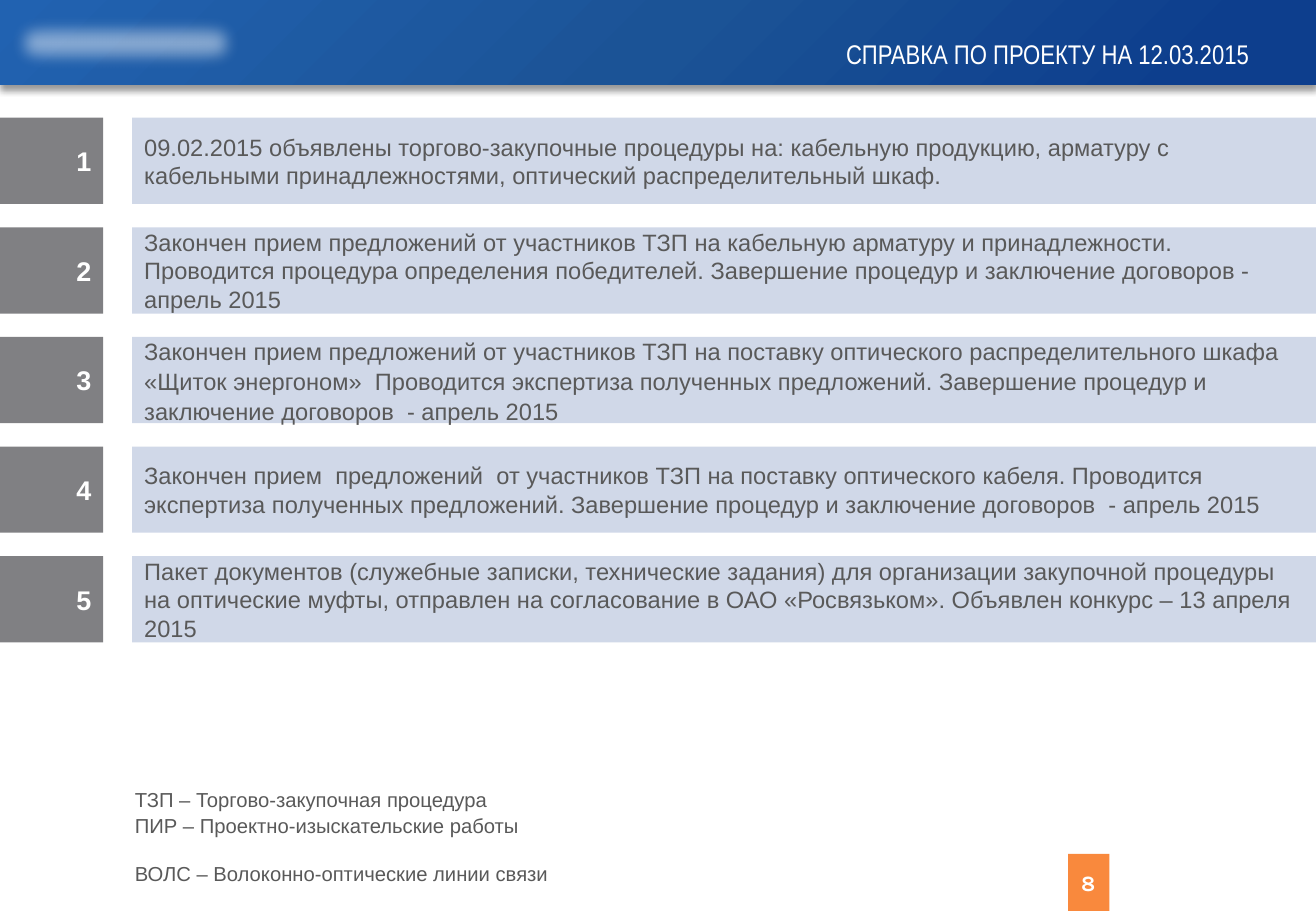
from dataclasses import dataclass

from lxml import etree
from pptx import Presentation
from pptx.dml.color import RGBColor
from pptx.enum.shapes import MSO_SHAPE as SHAPE
from pptx.enum.text import MSO_ANCHOR as ANCHOR, PP_ALIGN as ALIGN
from pptx.oxml import parse_xml
from pptx.oxml.ns import nsdecls
from pptx.util import Inches, Pt


@dataclass(frozen=True)
class Theme:
    white: str = "FFFFFF"
    text: str = "595959"
    number_fill: str = "808083"
    item_fill: str = "D0D8E8"
    accent: str = "F9893D"
    shadow: str = "000000"
    header_stops: tuple = ((9, "0D3E8D"), (50, "1B5396"), (100, "2162B1"))
    font: str = "Arial"
    title_font: str = "Arial Narrow"
    page_font: str = "Karla"
    title_size: int = 16
    number_size: int = 16
    item_size: int = 14
    page_size: int = 13
    note_size: int = 12


class Deck:
    """Holds the theme and current slide; boxes are (left, top, width, height) in percent of the slide."""

    def __init__(self, theme, width, height):
        self.theme = theme
        self.prs = Presentation()
        self.prs.slide_width, self.prs.slide_height = Inches(width), Inches(height)
        self.slide = self.prs.slides.add_slide(self.prs.slide_layouts[6])

    def place(self, box):
        w, h = self.prs.slide_width, self.prs.slide_height
        return [int(share * side / 100) for share, side in zip(box, (w, h, w, h))]

    def rect(self, box, color):
        sp = self.slide.shapes.add_shape(SHAPE.RECTANGLE, *self.place(box))
        sp.shadow.inherit = False
        sp.fill.solid()
        sp.fill.fore_color.rgb = RGBColor.from_string(color)
        sp.line.fill.background()
        return sp

    def effect(self, sp, xml):
        effects = sp._element.spPr.find("{*}effectLst")
        effects.append(parse_xml(xml))

    def header(self, box):
        """Band with a radial gradient from its lower right corner and a shadow below."""
        t = self.theme
        sp = self.rect(box, t.header_stops[0][1])
        stops = "".join(f'<a:gs pos="{pos * 1000}"><a:srgbClr val="{color}"/></a:gs>'
                        for pos, color in t.header_stops)
        gradient = parse_xml(
            f'<a:gradFill {nsdecls("a")} rotWithShape="1"><a:gsLst>{stops}</a:gsLst>'
            '<a:path path="circle"><a:fillToRect l="100000" t="100000"/></a:path></a:gradFill>')
        spPr = sp._element.spPr
        spPr.replace(spPr.find("{*}solidFill"), gradient)
        self.effect(sp, f'<a:outerShdw {nsdecls("a")} blurRad="{Pt(4)}" dist="{Pt(3)}" dir="5400000">'
                        f'<a:srgbClr val="{t.shadow}"><a:alpha val="40000"/></a:srgbClr></a:outerShdw>')

    def soft_patch(self, box):
        """Translucent white area with blurred edges."""
        sp = self.rect(box, self.theme.white)
        color = sp._element.spPr.find("{*}solidFill")[0]
        etree.SubElement(color, color.tag.replace("srgbClr", "alpha"), val="45000")
        self.effect(sp, f'<a:softEdge {nsdecls("a")} rad="{Inches(0.15)}"/>')

    def fill_text(self, sp, lines, size, color, font=None, bold=False,
                  align=ALIGN.LEFT, anchor=ANCHOR.MIDDLE, spacing=None):
        tf = sp.text_frame
        tf.word_wrap = True
        tf.vertical_anchor = anchor
        tf.text = "\n".join(lines)
        for p in tf.paragraphs:
            p.alignment = align
            if spacing:
                p.line_spacing = spacing
            for r in p.runs:
                r.font.size, r.font.bold = Pt(size), bold
                r.font.name = font or self.theme.font
                r.font.color.rgb = RGBColor.from_string(color)
        return tf

    def text(self, box, lines, size, color, **style):
        sp = self.slide.shapes.add_textbox(*self.place(box))
        return self.fill_text(sp, lines, size, color, **style)

    def item(self, number, top, height, content, spacing=None):
        t = self.theme
        badge = self.rect((0, top, 7.85, height), t.number_fill)
        self.fill_text(badge, [str(number)], t.number_size, t.white, bold=True, align=ALIGN.RIGHT)
        bar_left = 10.05
        bar = self.rect((bar_left, top, 100 - bar_left, height), t.item_fill)
        self.fill_text(bar, [content], t.item_size, t.text, spacing=spacing)


ITEMS = [
    ("09.02.2015 объявлены торгово-закупочные процедуры на: кабельную продукцию, арматуру с "
     "кабельными принадлежностями, оптический распределительный шкаф.", None),
    ("Закончен прием предложений от участников ТЗП на кабельную арматуру и принадлежности. "
     "Проводится процедура определения победителей. Завершение процедур и заключение договоров - "
     "апрель 2015", None),
    ("Закончен прием предложений от участников ТЗП на поставку оптического распределительного шкафа "
     "«Щиток энергоном»  Проводится экспертиза полученных предложений. Завершение процедур и "
     "заключение договоров  - апрель 2015", 1.07),
    ("Закончен прием  предложений  от участников ТЗП на поставку оптического кабеля. Проводится "
     "экспертиза полученных предложений. Завершение процедур и заключение договоров  - апрель 2015", None),
    ("Пакет документов (служебные записки, технические задания) для организации закупочной процедуры "
     "на оптические муфты, отправлен на согласование в ОАО «Росвязьком». Объявлен конкурс – 13 апреля "
     "2015", None),
]
NOTES = [
    "ТЗП – Торгово-закупочная процедура",
    "ПИР – Проектно-изыскательские работы",
    "ВОЛС – Волоконно-оптические линии связи",
]
FIRST_ROW, ROW_PITCH, ROW_HEIGHT = 12.93, 12.03, 9.47


def main():
    t = Theme()
    deck = Deck(t, 10.83, 7.5)
    deck.header((0, 0, 100, 9.33))
    deck.soft_patch((0, 0.7, 19, 8))
    deck.rect((81.16, 93.73, 3.14, 6.27), t.accent)
    deck.text((80.15, 94.67, 5.08, 4.4), ["8"], t.page_size, t.white,
              font=t.page_font, bold=True, align=ALIGN.CENTER)
    title = deck.text((21.33, 4.4, 74.98, 4), ["СПРАВКА ПО ПРОЕКТУ НА 12.03.2015"],
                      t.title_size, t.white, font=t.title_font,
                      align=ALIGN.RIGHT, anchor=ANCHOR.BOTTOM, spacing=0.9)
    title.margin_right = Inches(0.15)

    for i, (content, spacing) in enumerate(ITEMS):
        deck.item(i + 1, FIRST_ROW + i * ROW_PITCH, ROW_HEIGHT, content, spacing)

    notes = deck.text((9.33, 85.73, 34.16, 9.47), NOTES, t.note_size, t.text, anchor=ANCHOR.TOP)
    for p, gap in zip(notes.paragraphs[1:], (1, 14)):
        p.space_before = Pt(gap)
    deck.prs.save("out.pptx")


if __name__ == "__main__":
    main()
